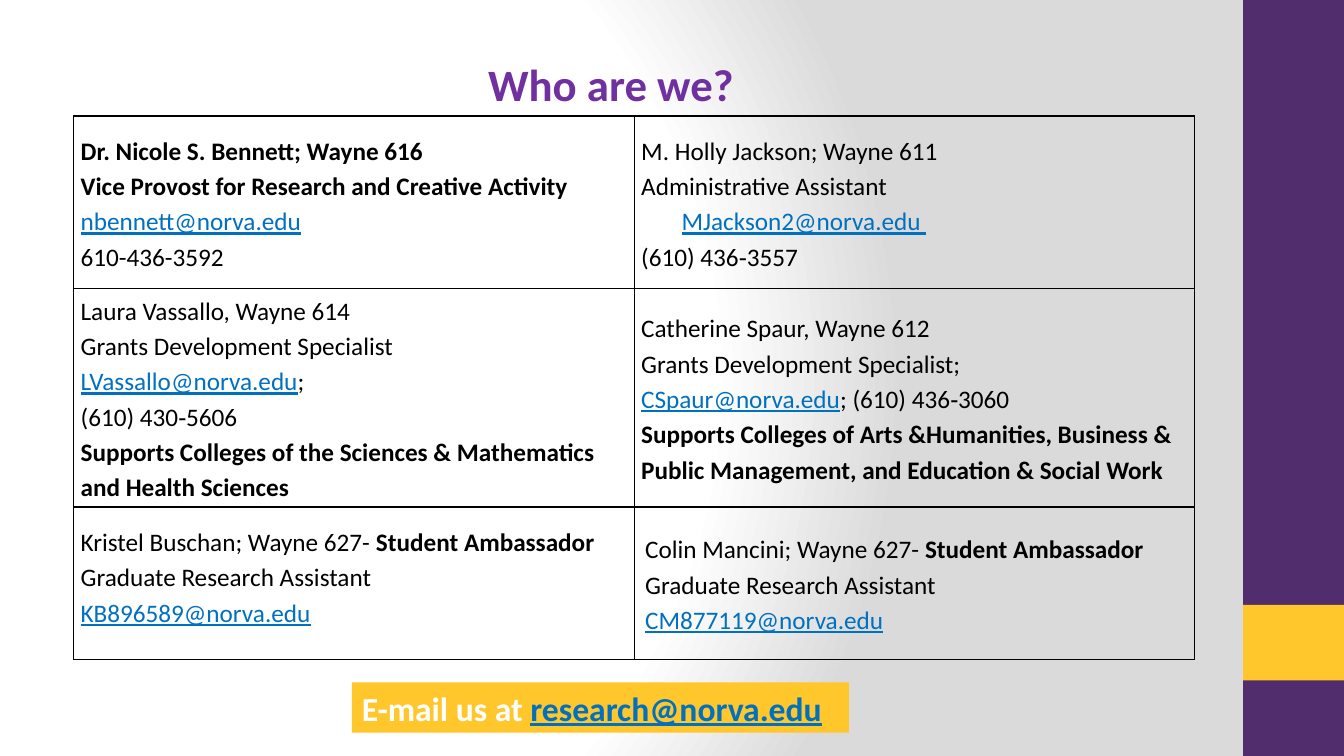
import pptx
import pptx.util
import pptx.oxml
import pptx.oxml.ns
import pptx.dml.color
import pptx.enum.shapes
import pptx.enum.text

Inches = pptx.util.Inches
ANCHOR = pptx.enum.text.MSO_ANCHOR
ALIGN = pptx.enum.text.PP_ALIGN

PURPLE, GOLD, BLUE = "512D6D", "FFC72C", "0070C0"
STYLES = {
    "plain": {"bold": False, "color": "000000"},
    "bold": {"bold": True, "color": "000000"},
    "link": {"bold": False, "color": BLUE, "underline": True},
    "title": {"bold": True, "color": "7030A0"},
    "call": {"bold": True, "color": "FFFFFF"},
    "call link": {"bold": True, "color": BLUE, "underline": True},
}

TITLE = [("Who are we?", "title")]
CONTACT = [("E-mail us at ", "call"), ("research@norva.edu", "call link")]
STAFF = [
    [
        [
            [("Dr. Nicole S. Bennett; Wayne 616", "bold")],
            [("Vice Provost for Research and Creative Activity", "bold")],
            [("nbennett@norva.edu", "link")],
            [("610-436-3592", "plain")],
        ],
        [
            [("M. Holly Jackson; Wayne 611", "plain")],
            [("Administrative Assistant", "plain")],
            [("MJackson2@norva.edu ", "link")],
            [("(610) 436‐3557", "plain")],
        ],
    ],
    [
        [
            [("Laura Vassallo, Wayne 614", "plain")],
            [("Grants Development Specialist", "plain")],
            [("LVassallo@norva.edu", "link"), (";", "plain")],
            [("(610) 430‐5606", "plain")],
            [("Supports Colleges of the Sciences & Mathematics and Health Sciences", "bold")],
        ],
        [
            [("Catherine Spaur, Wayne 612", "plain")],
            [("Grants Development Specialist;", "plain")],
            [("CSpaur@norva.edu", "link"), ("; (610) 436‐3060", "plain")],
            [("Supports Colleges of Arts &Humanities, Business & "
              "Public Management, and Education & Social Work", "bold")],
        ],
    ],
    [
        [
            [("Kristel Buschan; Wayne 627- ", "plain"), ("Student Ambassador", "bold")],
            [("Graduate Research Assistant", "plain")],
            [("KB896589@norva.edu", "link")],
        ],
        [
            [("Colin Mancini; Wayne 627- ", "plain"), ("Student Ambassador", "bold")],
            [("Graduate Research Assistant", "plain")],
            [("CM877119@norva.edu", "link")],
        ],
    ],
]
ROW_HEIGHTS = [1.71, 2.17, 1.51]
COLUMN_WIDTH = 5.56
CELL_INDENT, WIDE_INDENT, LINK_INDENT = 0.07, 0.11, 0.47
BOTTOM_GAP = 0.14
BANDS = [(0, 7.5, PURPLE), (6, 0.75, GOLD)]
BACKGROUND_STOPS = [(0, "FFFFFF"), (75, "FFFFFF"), (100, "DADADA")]


def rgb(value):
    return pptx.dml.color.RGBColor.from_string(value)


def set_all(target, values):
    for name, value in values.items():
        setattr(target, name, value)


def element(body):
    tag, rest = body.split(" ", 1)
    return pptx.oxml.parse_xml(f"<{tag} {pptx.oxml.ns.nsdecls('a')} {rest}")


def write(para, spans, size):
    for text, style in spans:
        span = para.add_run()
        span.text = text
        values = dict(STYLES[style], name="Calibri", size=pptx.util.Pt(size))
        span.font.color.rgb = rgb(values.pop("color"))
        set_all(span.font, values)


def add_box(page, left, top, width, height, color):
    box = page.shapes.add_shape(
        pptx.enum.shapes.MSO_SHAPE.RECTANGLE, *map(Inches, (left, top, width, height)))
    box.shadow.inherit = False
    box.fill.solid()
    box.fill.fore_color.rgb = rgb(color)
    box.line.fill.background()
    return box


def paint_background(page):
    page.background.fill.gradient()
    old = page.element.find(".//" + pptx.oxml.ns.qn("a:gradFill"))
    stops = "".join(
        f'<a:gs pos="{place * 1000}"><a:srgbClr val="{color}"/></a:gs>'
        for place, color in BACKGROUND_STOPS)
    old.getparent().replace(old, element(
        f'a:gradFill rotWithShape="1"><a:gsLst>{stops}</a:gsLst><a:path path="circle">'
        '<a:fillToRect l="20000" t="50000" r="100000" b="50000"/></a:path></a:gradFill>'))


def fill_cell(cell, lines, indent):
    set_all(cell, {"margin_left": 0, "margin_right": 0, "margin_top": 0,
                   "margin_bottom": 0, "vertical_anchor": ANCHOR.MIDDLE})
    for side in "LRTB":
        cell._tc.get_or_add_tcPr().append(element(
            f'a:ln{side} w="12700"><a:solidFill><a:srgbClr val="000000"/></a:solidFill></a:ln{side}>'))
    cell.fill.background()
    frame = cell.text_frame
    for number, spans in enumerate(lines):
        para = frame.paragraphs[0] if number == 0 else frame.add_paragraph()
        para.line_spacing = 1.15
        left = LINK_INDENT if spans[0][0].startswith("MJackson2") else indent
        properties = para._p.get_or_add_pPr()
        properties.set("marL", str(Inches(left)))
        properties.set("indent", "0")
        write(para, spans, 18)


def add_staff(page):
    table = page.shapes.add_table(
        len(STAFF), 2, Inches(0.73), Inches(1.15),
        Inches(2 * COLUMN_WIDTH), Inches(sum(ROW_HEIGHTS))).table
    set_all(table, {"first_row": False, "horz_banding": False})
    for column in table.columns:
        column.width = Inches(COLUMN_WIDTH)
    for r, (height, people) in enumerate(zip(ROW_HEIGHTS, STAFF)):
        table.rows[r].height = Inches(height)
        for c, lines in enumerate(people):
            fill_cell(table.cell(r, c), lines, WIDE_INDENT if (r, c) == (2, 1) else CELL_INDENT)
    table.cell(2, 0).margin_bottom = Inches(BOTTOM_GAP)


def main():
    deck = pptx.Presentation()
    set_all(deck, {"slide_width": Inches(13.33), "slide_height": Inches(7.5)})
    page = deck.slides.add_slide(deck.slide_layouts[5])
    paint_background(page)
    for top, height, color in BANDS:
        add_box(page, 12.33, top, 1, height, color)

    title = page.shapes.title
    set_all(title, {"left": 0, "top": Inches(0.51),
                    "width": Inches(12.12), "height": Inches(0.64)})
    title.text_frame.vertical_anchor = ANCHOR.MIDDLE
    title.text_frame.paragraphs[0].alignment = ALIGN.CENTER
    write(title.text_frame.paragraphs[0], TITLE, 32)

    add_staff(page)

    box = add_box(page, 3.49, 6.77, 4.93, 0.5, GOLD)
    set_all(box.text_frame, {"word_wrap": False, "vertical_anchor": ANCHOR.MIDDLE})
    box.text_frame.paragraphs[0].alignment = ALIGN.LEFT
    write(box.text_frame.paragraphs[0], CONTACT, 24)
    deck.save("out.pptx")


if __name__ == "__main__":
    main()
